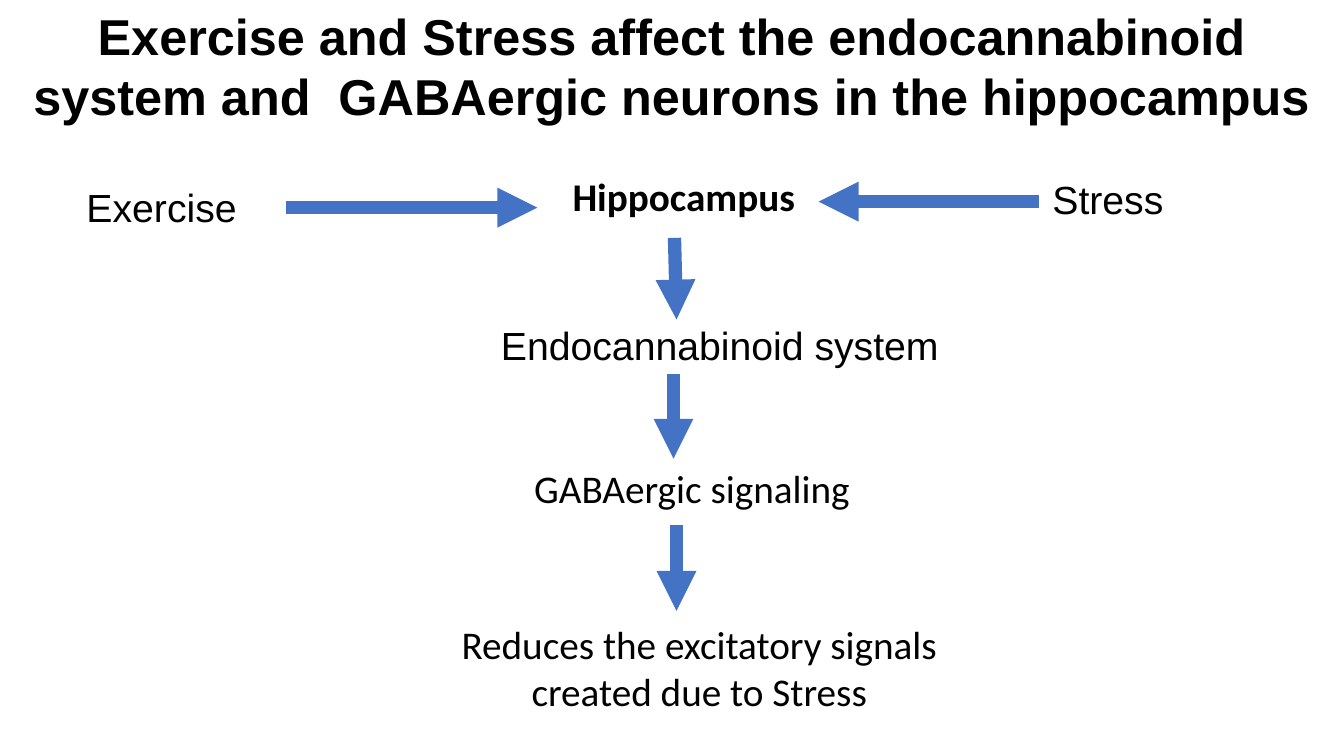
from dataclasses import dataclass

from lxml import etree
from pptx import Presentation
from pptx import util as u
from pptx.dml.color import RGBColor
from pptx.enum import shapes, text
from pptx.oxml import ns

BLACK = RGBColor(0x00, 0x00, 0x00)
BLUE = RGBColor(0x44, 0x72, 0xC4)
LEFT = text.PP_ALIGN.LEFT
MID = text.PP_ALIGN.CENTER


@dataclass
class Label:
    words: str
    left: float
    top: float
    width: float
    height: float = 0.57
    font: str = "Arial"
    size: int = 28
    bold: bool = False
    align: text.PP_ALIGN = LEFT
    anchor: text.MSO_ANCHOR = text.MSO_ANCHOR.TOP
    spacing: float = 1.0


@dataclass
class Arrow:
    x1: float
    y1: float
    x2: float
    y2: float


LABELS = [
    Label("Exercise and Stress affect the endocannabinoid system and  GABAergic "
          "neurons in the hippocampus", 0, 0, 13.33, 1.31, size=36, bold=True, align=MID),
    Label("Hippocampus", 5.58, 1.25, 2.52, 1.45, "Calibri", bold=True,
          anchor=text.MSO_ANCHOR.MIDDLE, spacing=0.9),
    Label("Exercise", 0.76, 1.77, 3.43),
    Label("Stress", 10.34, 1.69, 3.43),
    Label("Endocannabinoid system", 4.87, 3.14, 5.02),
    Label("GABAergic signaling", 5.2, 4.56, 3.44, font="Calibri"),
    Label("Reduces the excitatory signals created due to Stress",
          4.42, 6.1, 5.03, 1.04, "Calibri", align=MID),
]

ARROWS = [
    Arrow(2.84, 2.06, 5.33, 2.06),   # exercise to hippocampus
    Arrow(10.31, 2, 8.12, 2),        # stress to hippocampus
    Arrow(6.69, 2.36, 6.71, 3.17),   # down the chain
    Arrow(6.68, 3.71, 6.68, 4.55),
    Arrow(6.71, 5.21, 6.71, 6.06),
]


def add_label(slide, label: Label) -> None:
    box = slide.shapes.add_textbox(u.Inches(label.left), u.Inches(label.top),
                                   u.Inches(label.width), u.Inches(label.height))
    frame = box.text_frame
    frame.word_wrap = True
    frame.vertical_anchor = label.anchor
    para = frame.paragraphs[0]
    para.text = label.words
    para.alignment = label.align
    para.line_spacing = label.spacing
    para.font.name = label.font
    para.font.size = u.Pt(label.size)
    para.font.bold = label.bold
    para.font.color.rgb = BLACK


def add_arrow(slide, arrow: Arrow) -> None:
    line = slide.shapes.add_connector(
        shapes.MSO_CONNECTOR.STRAIGHT, u.Inches(arrow.x1), u.Inches(arrow.y1),
        u.Inches(arrow.x2), u.Inches(arrow.y2))
    line.line.color.rgb = BLUE
    line.line.width = u.Pt(9.5)
    # Arrowhead, and no shadow
    props = line.element.spPr
    etree.SubElement(props.find(ns.qn("a:ln")), ns.qn("a:tailEnd"), type="triangle")
    etree.SubElement(props, ns.qn("a:effectLst"))


def main() -> None:
    deck = Presentation()
    deck.slide_width = u.Inches(13.33)
    deck.slide_height = u.Inches(7.5)
    slide = deck.slides.add_slide(deck.slide_layouts[6])
    for arrow in ARROWS:
        add_arrow(slide, arrow)
    for label in LABELS:
        add_label(slide, label)
    deck.save("out.pptx")


if __name__ == "__main__":
    main()
